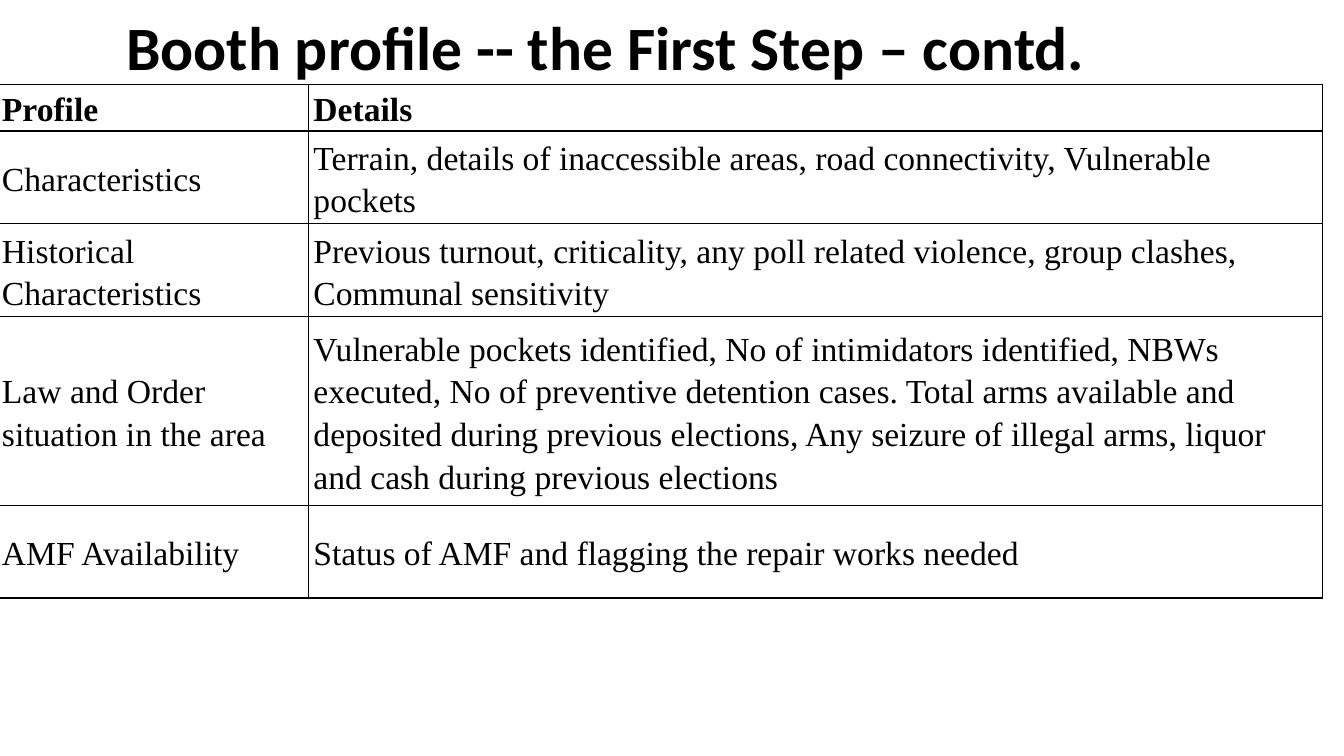
from lxml import etree
from pptx import Presentation
from pptx.dml.color import RGBColor
from pptx.enum.text import MSO_ANCHOR, PP_ALIGN
from pptx.oxml.ns import qn
from pptx.util import Cm, Pt

MIDDLE = MSO_ANCHOR.MIDDLE
CENTER = PP_ALIGN.CENTER
BLACK = "000000"
COLUMN_WIDTHS = (7.85, 25.55)
ROW_HEIGHTS = (1.17, 2.34, 2.34, 4.75, 2.34)
BOOTH_PROFILE = (
    ("Profile", "Details"),
    ("Characteristics",
     "Terrain, details of inaccessible areas, road connectivity, Vulnerable pockets"),
    ("Historical Characteristics",
     "Previous turnout, criticality, any poll related violence, group clashes, "
     "Communal sensitivity"),
    ("Law and Order situation in the area",
     "Vulnerable pockets identified, No of intimidators identified, NBWs executed, "
     "No of preventive detention cases. Total arms available and deposited during "
     "previous elections, Any seizure of illegal arms, liquor and cash during "
     "previous elections"),
    ("AMF Availability", "Status of AMF and flagging the repair works needed"),
)


def color(value):
    return RGBColor.from_string(value)


def add_run(p, text, font, size, bold):
    r = p.add_run()
    r.text = text
    r.font.name = font
    r.font.size = Pt(size)
    r.font.bold = bold
    r.font.color.rgb = color(BLACK)


def add_title(s, text):
    sp = s.shapes.add_textbox(Cm(2.34), Cm(0), Cm(25.86), Cm(2.31))
    tf = sp.text_frame
    tf.word_wrap = True
    tf.vertical_anchor = MIDDLE
    p = tf.paragraphs[0]
    p.alignment = CENTER
    add_run(p, text, "Calibri", 44, True)


def set_borders(cell):
    tc_pr = cell._tc.get_or_add_tcPr()
    for i, side in enumerate(("lnL", "lnR", "lnT", "lnB")):
        ln = etree.Element(qn(f"a:{side}"), w=str(Pt(1)))
        fill = etree.SubElement(ln, qn("a:solidFill"))
        etree.SubElement(fill, qn("a:srgbClr"), val=BLACK)
        tc_pr.insert(i, ln)


def fill_cell(cell, text, bold):
    cell.fill.background()
    cell.vertical_anchor = MIDDLE
    cell.margin_left = cell.margin_right = Cm(0.13)
    cell.margin_top = cell.margin_bottom = Cm(0)
    set_borders(cell)
    p = cell.text_frame.paragraphs[0]
    p.line_spacing = 1.15
    add_run(p, text, "Times New Roman", 24, bold)


def add_profile_table(s):
    table = s.shapes.add_table(
        len(ROW_HEIGHTS), len(COLUMN_WIDTHS), Cm(-0.08), Cm(2.13),
        Cm(sum(COLUMN_WIDTHS)), Cm(sum(ROW_HEIGHTS))).table
    table.horz_banding = False
    for column, width in zip(table.columns, COLUMN_WIDTHS):
        column.width = Cm(width)
    for row, height in zip(table.rows, ROW_HEIGHTS):
        row.height = Cm(height)
    for i, texts in enumerate(BOOTH_PROFILE):
        for j, text in enumerate(texts):
            fill_cell(table.cell(i, j), text, i == 0)


def main():
    prs = Presentation()
    prs.slide_width = Cm(33.87)
    prs.slide_height = Cm(19.05)
    s = prs.slides.add_slide(prs.slide_layouts[6])
    add_title(s, "Booth profile -- the First Step – contd.")
    add_profile_table(s)
    prs.save("out.pptx")


if __name__ == "__main__":
    main()
